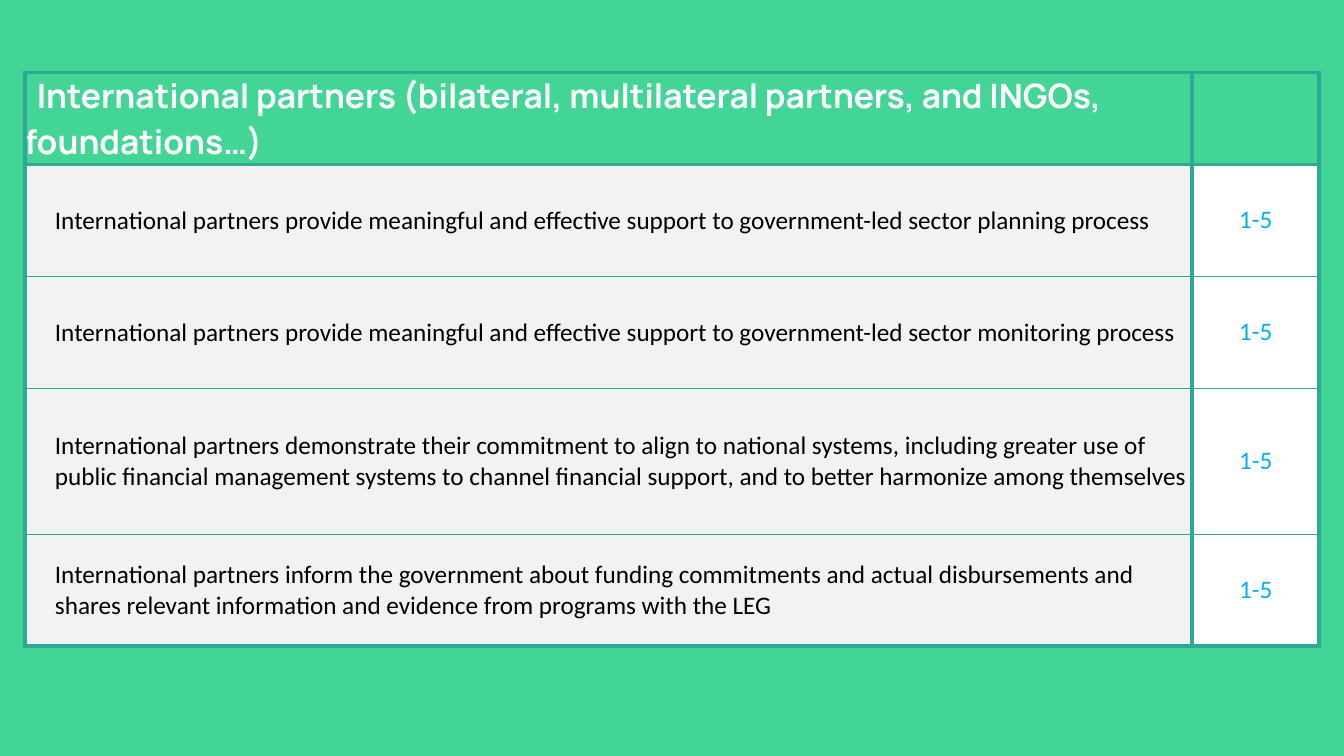
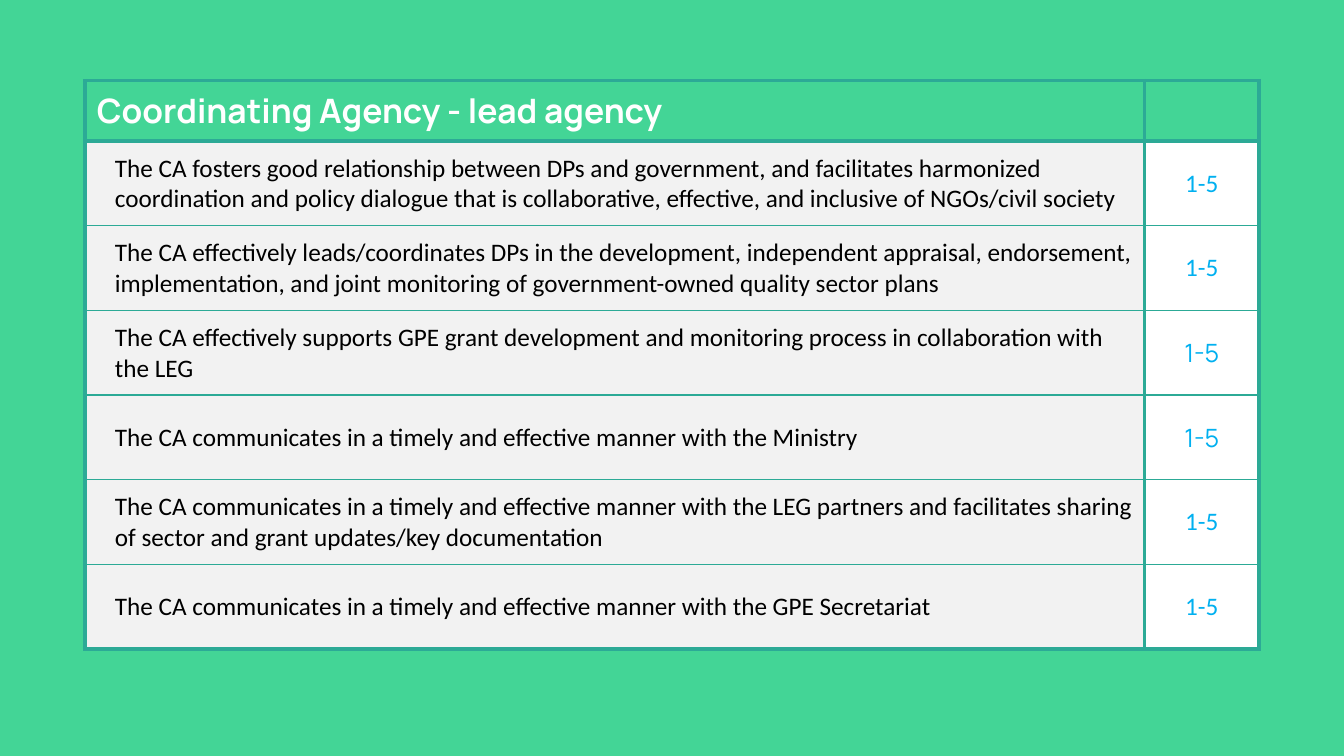
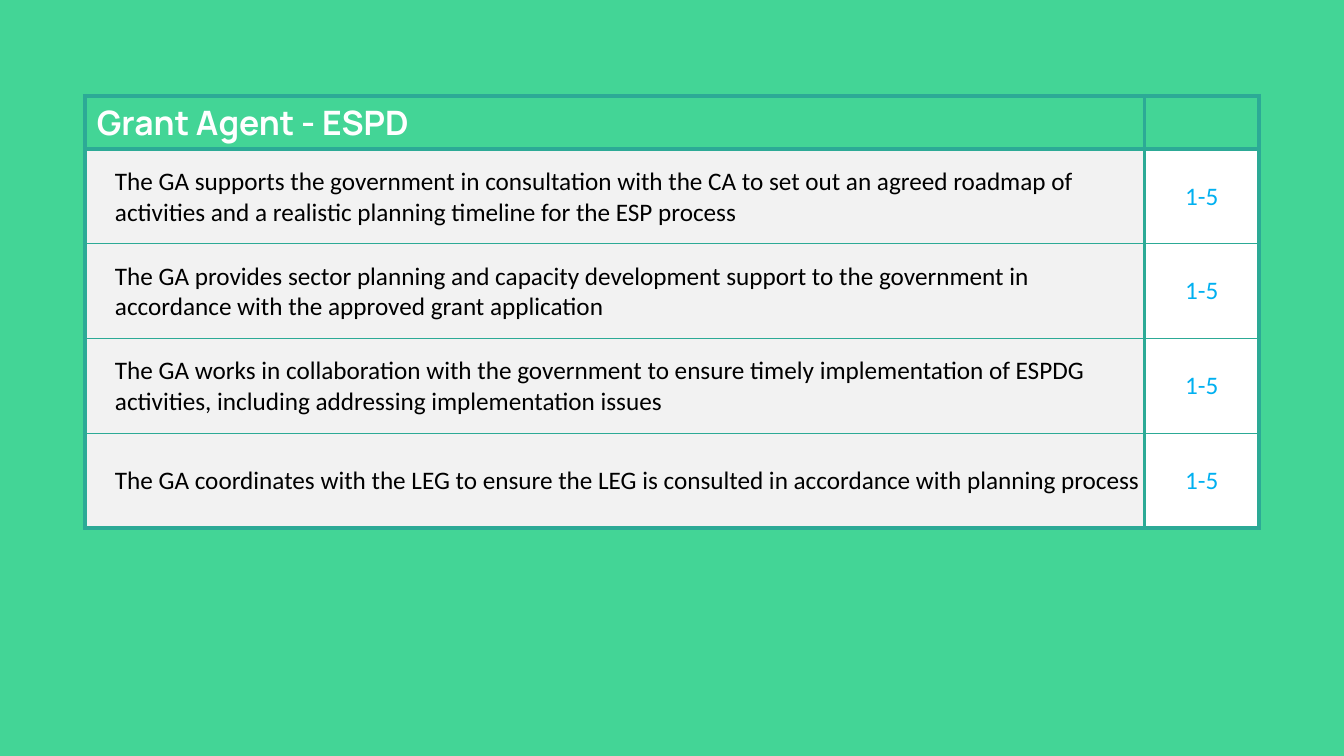
from lxml import etree
from pptx import Presentation
from pptx.dml.color import RGBColor
from pptx.enum.text import MSO_ANCHOR, PP_ALIGN
from pptx.oxml.ns import qn
from pptx.util import Inches, Pt

MIDDLE = MSO_ANCHOR.MIDDLE
LEFT, CENTER = PP_ALIGN.LEFT, PP_ALIGN.CENTER

GREEN, TEAL, BLUE = "43D596", "2CAA96", "00B0F0"
GREY, WHITE, BLACK = "F2F2F2", "FFFFFF", "000000"
HEAD, BODY = "Manrope", "Calibri"
WIDE, HIGH = 13.33, 7.5
THICK, THIN = 3, 1
SCORE = "1-5"

# top, column widths, head row height, statement row heights,
# rows whose score is set in the heading font
SLIDES = [
    dict(
        title="International partners (bilateral, multilateral partners, and INGOs, foundations…)",
        top=0.72, cols=(11.58, 1.26), head=0.6, rows=(1.11, 1.11, 1.45, 1.11),
        items=[
            "International partners provide meaningful and effective support to government-led sector planning process",
            "International partners provide meaningful and effective support to government-led sector monitoring process",
            "International partners demonstrate their commitment to align to national systems, including greater use of public financial management systems to channel financial support, and to better harmonize among themselves",
            "International partners inform the government about funding commitments and actual disbursements and shares relevant information and evidence from programs with the LEG",
        ]),
    dict(
        title="Coordinating Agency - lead agency",
        top=0.8, cols=(10.51, 1.14), head=0.6, rows=(0.84,) * 6, special=(3, 4),
        items=[
            "The CA fosters good relationship between DPs and government, and facilitates harmonized coordination and policy dialogue that is collaborative, effective, and inclusive of NGOs/civil society",
            "The CA effectively leads/coordinates DPs in the development, independent appraisal, endorsement, implementation, and joint monitoring of government-owned quality sector plans",
            "The CA effectively supports GPE grant development and monitoring process in collaboration with the LEG",
            "The CA communicates in a timely and effective manner with the Ministry",
            "The CA communicates in a timely and effective manner with the LEG partners and facilitates sharing of sector and grant updates/key documentation",
            "The CA communicates in a timely and effective manner with the GPE Secretariat",
        ]),
    dict(
        title="Grant Agent - ESPD",
        top=0.95, cols=(10.51, 1.14), head=0.53, rows=(0.94,) * 4,
        items=[
            "The GA supports the government in consultation with the CA to set out an agreed roadmap of activities and a realistic planning timeline for the ESP process",
            "The GA provides sector planning and capacity development support to the government in accordance with the approved grant application",
            "The GA works in collaboration with the government to ensure timely implementation of ESPDG activities, including addressing implementation issues",
            "The GA coordinates with the LEG to ensure the LEG is consulted in accordance with planning process",
        ]),
]


def paint(fill, color):
    fill.solid()
    fill.fore_color.rgb = RGBColor.from_string(color)


def frame(cell, top, bottom):
    """Draw the cell's borders: thick sides, given top and bottom widths."""
    props = cell._tc.get_or_add_tcPr()
    for side, width in (("L", THICK), ("R", THICK), ("T", top), ("B", bottom)):
        line = etree.SubElement(props, qn("a:ln" + side), w=str(Pt(width)))
        solid = etree.SubElement(line, qn("a:solidFill"))
        etree.SubElement(solid, qn("a:srgbClr"), val=TEAL)


def write(cell, text, color, font, size=18, bold=False, align=LEFT, pad=(0, 0, 0, 0)):
    cell.vertical_anchor = MIDDLE
    (cell.margin_left, cell.margin_top,
     cell.margin_right, cell.margin_bottom) = map(Inches, pad)
    para = cell.text_frame.paragraphs[0]
    para.text = text
    para.alignment = align
    face = para.runs[0].font
    face.name, face.size, face.bold = font, Pt(size), bold
    face.color.rgb = RGBColor.from_string(color)
    return para


def build(deck, title, top, cols, head, rows, items, special=()):
    slide = deck.slides.add_slide(deck.slide_layouts[6])
    paint(slide.background.fill, GREEN)
    highs = (head, *rows)
    wide = sum(cols)
    table = slide.shapes.add_table(
        len(highs), len(cols), Inches((WIDE - wide) / 2), Inches(top),
        Inches(wide), Inches(sum(highs))).table
    table.first_row = table.horz_banding = False
    for col, size in zip(table.columns, cols):
        col.width = Inches(size)
    last = len(rows)
    for i, (row, high) in enumerate(zip(table.rows, highs)):
        row.height = Inches(high)
        fills = (GREY, WHITE) if i else (GREEN, GREEN)
        for cell, fill in zip(row.cells, fills):
            frame(cell, THICK if i < 2 else THIN, THICK if i in (0, last) else THIN)
            paint(cell.fill, fill)

    para = write(table.cell(0, 0), title, WHITE, HEAD, 24, True)
    para._p.get_or_add_pPr().set("indent", str(Inches(0.12)))
    for i, item in enumerate(items, 1):
        write(table.cell(i, 0), item, BLACK, BODY, pad=(0.3, 0.01, 0.01, 0))
        write(table.cell(i, 1), SCORE, BLUE, HEAD if i in special else BODY, align=CENTER)


def main():
    deck = Presentation()
    deck.slide_width, deck.slide_height = Inches(WIDE), Inches(HIGH)
    for data in SLIDES:
        build(deck, **data)
    deck.save("out.pptx")


if __name__ == "__main__":
    main()
